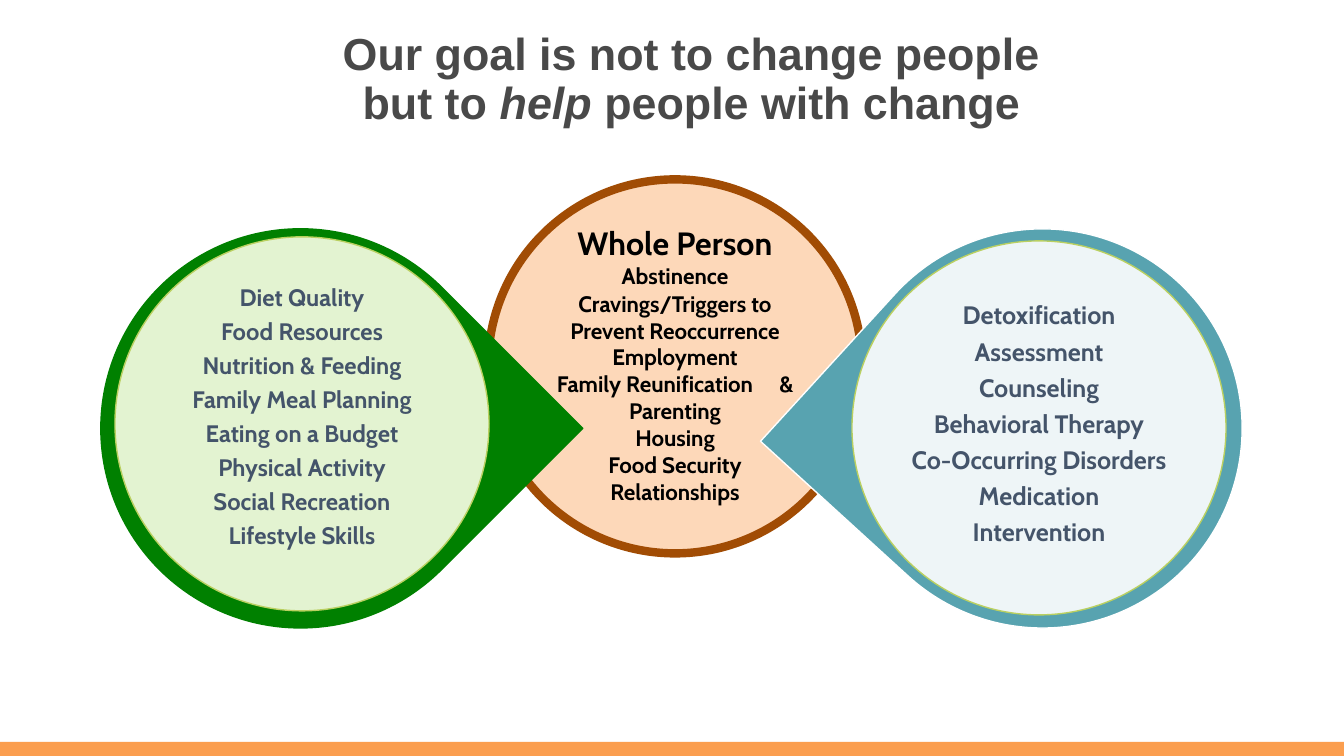
from lxml.etree import SubElement
from pptx import Presentation
from pptx.dml.color import RGBColor
from pptx.enum.shapes import MSO_SHAPE
from pptx.enum.text import MSO_ANCHOR, PP_ALIGN
from pptx.oxml.ns import qn
from pptx.util import Emu, Pt

PX = 9144  # 100 px to the inch

COLORS = {
    "white": "FFFFFF", "black": "000000", "title": "494949", "slate": "44546A",
    "bar": "FB9E4F", "peach": "FDD8B9", "brown": "A14C04", "green": "008000",
    "mint": "E3F3D1", "lime": "BAD061", "teal": "58A3B0",
}

FOOD = ["Diet Quality", "Food Resources", "Nutrition & Feeding",
        "Family Meal Planning", "Eating on a Budget", "Physical Activity",
        "Social Recreation", "Lifestyle Skills"]
TREATMENT = ["Detoxification", "Assessment", "Counseling", "Behavioral Therapy",
             "Co-Occurring Disorders", "Medication", "Intervention"]
PERSON = ["Cravings/Triggers to Prevent Reoccurrence", "Employment",
          "Family Reunification", "Housing", "Food Security", "Relationships"]


class SlideMaker:
    def __init__(self, slide, font="Cabin"):
        self.slide, self.font = slide, font

    def shape(self, kind, x, y, w, h, fill, line=None, weight=1, rotation=0, alpha=None):
        s = self.slide.shapes.add_shape(kind, *(Emu(v * PX) for v in (x, y, w, h)))
        s.shadow.inherit = False
        s.rotation = rotation
        s.fill.solid()
        s.fill.fore_color.rgb = RGBColor.from_string(COLORS[fill])
        if alpha is not None:
            color = s.fill._xPr.find(qn("a:solidFill"))[0]
            SubElement(color, qn("a:alpha")).set("val", str(alpha * 1000))
        if line:
            s.line.color.rgb = RGBColor.from_string(COLORS[line])
            s.line.width = Pt(weight)
        else:
            s.line.fill.background()
        return s

    def text_box(self, x, y, w, h, anchor=MSO_ANCHOR.MIDDLE, side=3, edge=3):
        box = self.slide.shapes.add_textbox(*(Emu(v * PX) for v in (x, y, w, h)))
        tf = box.text_frame
        tf.word_wrap = True
        tf.vertical_anchor = anchor
        tf.margin_left = tf.margin_right = Emu(side * PX)
        tf.margin_top = tf.margin_bottom = Emu(edge * PX)
        return tf

    def paragraph(self, tf, first=False, spacing=0.9, before=0):
        p = tf.paragraphs[0] if first else tf.add_paragraph()
        p.alignment = PP_ALIGN.CENTER
        p.line_spacing = spacing
        p.space_before = Pt(0 if first else before)
        return p

    def run(self, p, text, size, color, font=None, italic=False):
        r = p.add_run()
        r.text = text
        r.font.name = font or self.font
        r.font.size = Pt(size)
        r.font.bold = True
        r.font.italic = italic
        r.font.color.rgb = RGBColor.from_string(COLORS[color])
        return r

    def topics(self, x, y, size, items, inset):
        tf = self.text_box(x, y, 265, 265, side=inset, edge=inset)
        for i, item in enumerate(items):
            p = self.paragraph(tf, i == 0, before=round(0.35 * size, 2))
            self.run(p, item, size, "slate")


def main():
    prs = Presentation()
    prs.slide_width, prs.slide_height = Emu(1333 * PX), Emu(750 * PX)
    maker = SlideMaker(prs.slides.add_slide(prs.slide_layouts[6]))

    # Footer bar
    maker.shape(MSO_SHAPE.RECTANGLE, 0, 736, 1333, 14, "bar")

    # Whole person circle
    maker.shape(MSO_SHAPE.OVAL, 484, 178, 371, 371, "peach", "brown", 6)
    tf = maker.text_box(537, 231, 265, 265)
    maker.run(maker.paragraph(tf, True), "Whole Person", 23, "black")
    maker.run(maker.paragraph(tf, before=2), "Abstinence", 16, "black")
    for item in PERSON:
        p = maker.paragraph(tf, spacing=1.0)
        maker.run(p, item, 16, "black")
        if item == "Family Reunification":
            gap = maker.run(p, " ", 16, "black")
            gap.font._element.set("spc", "1500")  # wide gap before the ampersand
            maker.run(p, "& Parenting", 16, "black")

    # Treatment teardrop
    maker.shape(MSO_SHAPE.TEAR, 836, 227, 396, 396, "teal", "white", rotation=222.4)
    maker.shape(MSO_SHAPE.OVAL, 845, 239, 371, 371, "white", "lime", alpha=90)
    maker.topics(898, 289, 18, TREATMENT, 3)

    # Food and lifestyle teardrop
    maker.shape(MSO_SHAPE.TEAR, 100, 227, 396, 396, "green", "green", rotation=45)
    maker.shape(MSO_SHAPE.OVAL, 114, 235, 371, 371, "mint", "lime")
    maker.topics(167, 282, 17, FOOD, 1)

    # Title
    tf = maker.text_box(320, 27, 732, 100, MSO_ANCHOR.TOP, side=0, edge=5)
    p = maker.paragraph(tf, True)
    for text, italic in (("Our goal is not to change people but to ", False),
                         ("help", True), (" people with change", False)):
        maker.run(p, text, 32, "title", "Arial", italic)

    prs.save("out.pptx")


if __name__ == "__main__":
    main()
